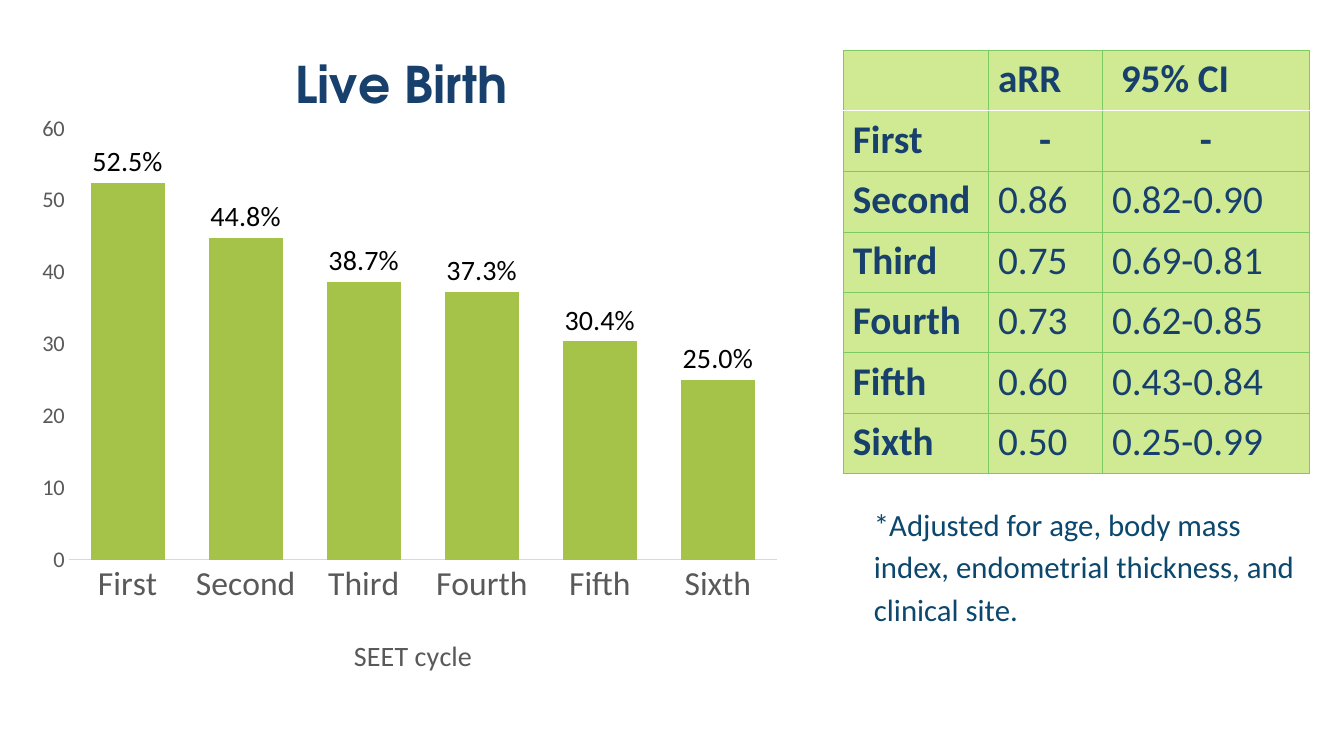
from dataclasses import dataclass

from lxml import etree
from pptx import Presentation
from pptx.chart.data import CategoryChartData
from pptx.dml.color import RGBColor
from pptx.enum.chart import XL_CHART_TYPE, XL_LABEL_POSITION, XL_TICK_MARK
from pptx.enum.text import PP_ALIGN
from pptx.oxml import parse_xml
from pptx.oxml.ns import nsdecls, qn
from pptx.util import Inches, Pt

COLUMNS = XL_CHART_TYPE.COLUMN_CLUSTERED
OUTSIDE = XL_LABEL_POSITION.OUTSIDE_END
NO_TICK = XL_TICK_MARK.NONE
CENTER = PP_ALIGN.CENTER


@dataclass(frozen=True)
class Theme:
    body_font: str = "Calibri"
    title_font: str = "TeX Gyre Adventor"
    navy: str = "17406D"
    note: str = "0C486E"
    black: str = "000000"
    gray: str = "595959"
    axis_line: str = "D9D9D9"
    bar: str = "A5C249"
    cell: str = "D0EA93"
    border: str = "7CCA62"
    white: str = "FFFFFF"
    title_size: int = 36
    table_size: int = 28
    category_size: int = 24
    note_size: int = 22
    label_size: int = 20
    value_size: int = 16


theme = Theme()


def style_font(font, size, color, bold=False, name=theme.body_font):
    font.name = name
    font.size = Pt(size)
    font.bold = bold
    font.color.rgb = RGBColor.from_string(color)


def place_in_chart(element, x, y, width=None, height=None):
    """Set a manual layout, in fractions of the chart, on a title or plot area."""
    for old_layout in element.findall(qn("c:layout")):
        element.remove(old_layout)
    layout = etree.Element(qn("c:layout"))
    manual = etree.SubElement(layout, qn("c:manualLayout"))
    settings = {"xMode": "edge", "yMode": "edge", "x": x, "y": y}
    if width:
        settings = {"layoutTarget": "inner", **settings, "w": width, "h": height}
    for tag, value in settings.items():
        etree.SubElement(manual, qn(f"c:{tag}")).set("val", str(value))
    text = element.find(qn("c:tx"))
    element.insert(0 if text is None else element.index(text) + 1, layout)


presentation = Presentation()
presentation.slide_width = Inches(13.33)
presentation.slide_height = Inches(7.5)
slide = presentation.slides.add_slide(presentation.slide_layouts[6])

# Footnote
note_box = slide.shapes.add_textbox(Inches(8.57), Inches(4.91), Inches(4.63), Inches(1.86))
note_box.text_frame.word_wrap = True
paragraph = note_box.text_frame.paragraphs[0]
paragraph.line_spacing = 1.15
paragraph.space_after = Pt(8)
run = paragraph.add_run()
run.text = "*Adjusted for age, body mass index, endometrial thickness, and clinical site."
style_font(run.font, theme.note_size, theme.note)

# Table of adjusted risk ratios
table_rows = [
    ("", "aRR", " 95% CI"),
    ("First", "-", "-"),
    ("Second", "0.86", "0.82-0.90"),
    ("Third", "0.75", "0.69-0.81"),
    ("Fourth", "0.73", "0.62-0.85"),
    ("Fifth", "0.60", "0.43-0.84"),
    ("Sixth", "0.50", "0.25-0.99"),
]
column_widths = (1.44, 1.13, 2.06)
row_height = 0.6
table = slide.shapes.add_table(
    len(table_rows), len(column_widths), Inches(8.36), Inches(0.5),
    Inches(sum(column_widths)), Inches(row_height * len(table_rows))).table
for column, width in zip(table.columns, column_widths):
    column.width = Inches(width)
for row_index, texts in enumerate(table_rows):
    table.rows[row_index].height = Inches(row_height)
    for column_index, text in enumerate(texts):
        cell = table.cell(row_index, column_index)
        properties = cell._tc.get_or_add_tcPr()
        for side in "LRTB":
            under_header = (row_index, side) in ((0, "B"), (1, "T"))
            color, line_width = (theme.white, 1) if under_header else (theme.border, 0.5)
            properties.append(parse_xml(
                f'<a:ln{side} {nsdecls("a")} w="{Pt(line_width)}"><a:solidFill>'
                f'<a:srgbClr val="{color}"/></a:solidFill></a:ln{side}>'))
        cell.fill.solid()
        cell.fill.fore_color.rgb = RGBColor.from_string(theme.cell)
        if text:
            paragraph = cell.text_frame.paragraphs[0]
            if text == "-":
                paragraph.alignment = CENTER
            run = paragraph.add_run()
            run.text = text
            bold = row_index < 2 or column_index == 0
            style_font(run.font, theme.table_size, theme.navy, bold)

# Live birth chart
chart_data = CategoryChartData(number_format="0.0")
chart_data.categories = [texts[0] for texts in table_rows[1:]]
chart_data.add_series("Series 1", (52.5, 44.8, 38.7, 37.3, 30.4, 25))
chart = slide.shapes.add_chart(
    COLUMNS, Inches(0.14), Inches(0.11), Inches(7.72), Inches(6.68), chart_data).chart
chart.has_legend = False
style_font(chart.font, 10, theme.black)
place_in_chart(chart.element.find(f".//{qn('c:plotArea')}"), 0.07, 0.175, 0.91, 0.64)

# Bars and their labels
plot = chart.plots[0]
plot.gap_width = 59
plot.overlap = -37
plot.vary_by_categories = False
bars = plot.series[0].format.fill
bars.solid()
bars.fore_color.rgb = RGBColor.from_string(theme.bar)
plot.has_data_labels = True
labels = plot.data_labels
labels.show_value = True
labels.position = OUTSIDE
labels.number_format = '0.0"%"'
labels.number_format_is_linked = False
style_font(labels.font, theme.label_size, theme.black)

# Axes
category_axis, value_axis = chart.category_axis, chart.value_axis
for axis, size in ((category_axis, theme.category_size), (value_axis, theme.value_size)):
    axis.major_tick_mark = axis.minor_tick_mark = NO_TICK
    axis.has_major_gridlines = False
    style_font(axis.tick_labels.font, size, theme.gray)
category_axis.format.line.color.rgb = RGBColor.from_string(theme.axis_line)
category_axis.format.line.width = Pt(0.75)
value_axis.format.line.fill.background()
value_axis.minimum_scale, value_axis.maximum_scale = 0, 60
value_axis.major_unit = 10
value_axis.tick_labels.number_format = "0"
value_axis.tick_labels.number_format_is_linked = False

# Chart title and axis title
titles = (
    (chart.chart_title, "Live Birth", theme.title_size, theme.navy, True,
     theme.title_font, 0.35, 0.06),
    (category_axis.axis_title, "SEET cycle", theme.label_size, theme.gray, False,
     theme.body_font, 0.43, 0.92),
)
for title, text, size, color, bold, font_name, x, y in titles:
    run = title.text_frame.paragraphs[0].add_run()
    run.text = text
    style_font(run.font, size, color, bold, font_name)
    place_in_chart(title.element, x, y)

presentation.save("out.pptx")
